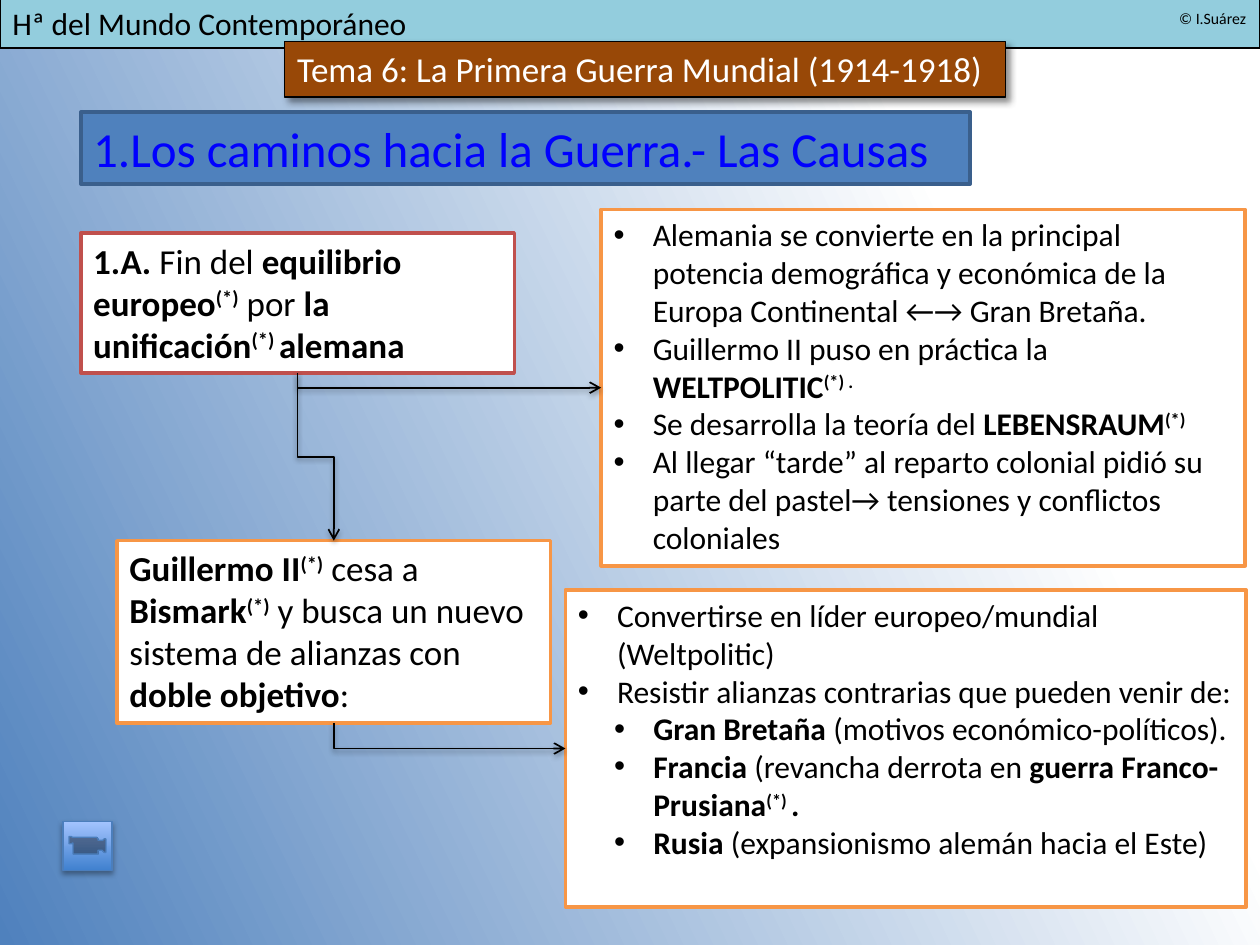
import pptx
import pptx.util
import pptx.dml.color
import pptx.enum.shapes
import pptx.enum.text
import pptx.oxml
import pptx.oxml.ns

Cm, Pt = pptx.util.Cm, pptx.util.Pt
KIND = pptx.enum.shapes.MSO_SHAPE
ELBOW = pptx.enum.shapes.MSO_CONNECTOR.ELBOW
TOP = pptx.enum.text.MSO_ANCHOR.TOP
LEFT = pptx.enum.text.PP_ALIGN.LEFT
BOLD, SUP = "bold", "sup"
STAR = ("(*)", SUP)

THEME = {
    "font": "Calibri",
    # style: fill, line, line width, text size, text colour
    "head": ("93CDDD", "000000", 0.75, 18, "000000"),
    "topic": ("984807", "000000", 0.75, 20, "FFFFFF"),
    "credit": (None, None, 0, 9, "000000"),
    "title": ("4F81BD", "3A5F8C", 2, 28, "0000FF"),
    "cause": ("FFFFFF", "C0504D", 2, 20, "000000"),
    "step": ("FFFFFF", "F79646", 2, 20, "000000"),
    "list": ("FFFFFF", "F79646", 2, 18, "000000"),
    "back": ((0, "4F81BD"), (0.76, "FFFFFF")),
    "film": ((0, "3F80CE"), (1, "A4C4FF")),
    "edge": "4B7EBC",
    "arrow": "000000",
    # shadow: opacity %, blur pt, distance pt, angle
    "topic shade": (43, 4, 3, 45),
    "arrow shade": (38, 3.1, 1.6, 90),
    "film shade": (35, 3.1, 1.8, 90),
}

# name: style, (left, top, width, height) in cm, paragraphs of (level, runs)
BOXES = {
    "head": ("head", (0, -0.05, 25.4, 1.02), [(0, ["Hª del Mundo Contemporáneo"])]),
    "topic": ("topic", (5.74, 0.84, 14.53, 1.12),
              [(0, ["Tema 6: La Primera Guerra Mundial (1914-1918)"])]),
    "credit": ("credit", (23.52, 0.05, 1.88, 0.64), [(0, ["© I.Suárez"])]),
    "title": ("title", (1.63, 2.26, 17.93, 1.45),
              [(0, ["1.Los caminos hacia la Guerra.- Las Causas"])]),
    "cause": ("cause", (1.63, 4.7, 8.74, 2.82), [
        (0, [("1.A. ", BOLD), "Fin del ", ("equilibrio europeo", BOLD), STAR, " por ",
             ("la unificación", BOLD), ("(*) ", SUP), ("alemana", BOLD)])]),
    "rise": ("list", (12.12, 4.22, 12.98, 7.19), [
        (1, ["Alemania se convierte en la principal potencia demográfica y económica "
             "de la Europa Continental ←→ Gran Bretaña."]),
        (1, ["Guillermo II puso en práctica la", (" WELTPOLITIC", BOLD), ("(*) .", SUP)]),
        (1, ["Se desarrolla la teoría del ", ("LEBENSRAUM", BOLD), STAR]),
        (1, ["Al llegar “tarde” al reparto colonial pidió su parte del pastel→ "
             "tensiones y conflictos coloniales"])]),
    "kaiser": ("step", (2.36, 10.9, 8.74, 3.68), [
        (0, [("Guillermo II", BOLD), STAR, " cesa a ", ("Bismark", BOLD), STAR,
             " y busca un nuevo sistema de alianzas con ", ("doble objetivo", BOLD), ":"])]),
    "goals": ("list", (11.4, 11.89, 13.72, 6.4), [
        (1, ["Convertirse en líder europeo/mundial (Weltpolitic)"]),
        (1, ["Resistir alianzas contrarias que pueden venir de:"]),
        (2, [("Gran Bretaña ", BOLD), "(motivos económico-políticos)."]),
        (2, [("Francia", BOLD), " (revancha derrota en ", ("guerra Franco-Prusiana", BOLD),
             ("(*) ", SUP), (".", BOLD)]),
        (2, [("Rusia", BOLD), " (expansionismo alemán hacia el Este)"])]),
}
ARROWS = [("cause", "rise", "left"), ("cause", "kaiser", "top"), ("kaiser", "goals", "left")]
FILM = (1.27, 16.56, 0.99, 0.99)
INDENT = {1: 0.79, 2: 1.52}
HANG = 0.79


def rgb(code):
    return pptx.dml.color.RGBColor.from_string(code)


def put(item, values):
    for name, value in values.items():
        setattr(item, name, value)


def add_xml(parent, text):
    space = pptx.oxml.ns.nsdecls("a")
    node = pptx.oxml.parse_xml(text.replace(" ", f" {space} ", 1))
    parent.append(node)


def shade(shape, look):
    """Give the shape an outer shadow from (opacity, blur, distance, angle)."""
    alpha, blur, dist, angle = look
    add_xml(shape._element.spPr,
            f'<a:effectLst ><a:outerShdw blurRad="{Pt(blur)}" dist="{Pt(dist)}" '
            f'dir="{angle * 60000}" rotWithShape="0"><a:srgbClr val="000000">'
            f'<a:alpha val="{alpha * 1000}"/></a:srgbClr></a:outerShdw></a:effectLst>')


def blend(fill, stops, angle):
    fill.gradient()
    fill.gradient_angle = angle
    for stop, (place, code) in zip(fill.gradient_stops, stops):
        stop.position = place
        stop.color.rgb = rgb(code)


def stroke(line, code, width):
    line.fill.solid()
    put(line, {"width": Pt(width)})
    line.color.rgb = rgb(code)


def write(frame, paras, size, code):
    for spot, (level, runs) in enumerate(paras):
        para = frame.add_paragraph() if spot else frame.paragraphs[0]
        para.alignment = LEFT
        if level:
            props = para._p.get_or_add_pPr()
            props.set("marL", str(Cm(INDENT[level])))
            props.set("indent", str(-Cm(HANG)))
            add_xml(props, '<a:buFont typeface="Arial"/>')
            add_xml(props, '<a:buChar char="•"/>')
        for part in runs:
            text, mark = (part, None) if isinstance(part, str) else part
            run = para.add_run()
            run.text = text
            put(run.font, {"name": THEME["font"], "size": Pt(size), "bold": mark is not None})
            run.font.color.rgb = rgb(code)
            if mark == SUP:
                run._r.get_or_add_rPr().set("baseline", "30000")


def add_box(slide, style, place, paras):
    fill, line, width, size, code = THEME[style]
    spot = [Cm(n) for n in place]
    if fill:
        box = slide.shapes.add_shape(KIND.RECTANGLE, *spot)
        box.shadow.inherit = False
        box.fill.solid()
        box.fill.fore_color.rgb = rgb(fill)
        stroke(box.line, line, width)
    else:
        box = slide.shapes.add_textbox(*spot)
    put(box.text_frame, {"word_wrap": bool(fill), "vertical_anchor": TOP})
    write(box.text_frame, paras, size, code)
    return box


def add_arrow(slide, start, end, side):
    """Bend an arrow from the bottom of start to the left or top of end."""
    x, y = start.left + start.width // 2, start.top + start.height
    if side == "left":
        far, low = end.left, end.top + end.height // 2
    else:
        far, low = end.left + end.width // 2, end.top
    wide, high = far - x, low - y
    # A quarter turn swaps the sides of the frame around its centre
    left, top = (x + far - high) // 2, (y + low - wide) // 2
    link = slide.shapes.add_connector(ELBOW, left, top, left + high, top + wide)
    frame = link._element.spPr.xfrm
    frame.set("rot", str(270 * 60000))
    frame.set("flipH", "1")
    if side == "left":
        link._element.spPr.prstGeom.set("prst", "bentConnector2")
    stroke(link.line, THEME["arrow"], 1)
    add_xml(link.line._get_or_add_ln(), '<a:tailEnd type="arrow"/>')
    shade(link, THEME["arrow shade"])


def main():
    deck = pptx.Presentation()
    put(deck, {"slide_width": Cm(25.4), "slide_height": Cm(19.05)})
    slide = deck.slides.add_slide(deck.slide_layouts[6])
    blend(slide.background.fill, THEME["back"], 26)
    boxes = {name: add_box(slide, *data) for name, data in BOXES.items()}
    topic = boxes["topic"]
    topic._element.spPr.remove(topic._element.spPr.find(pptx.oxml.ns.qn("a:effectLst")))
    shade(topic, THEME["topic shade"])
    for start, end, side in ARROWS:
        add_arrow(slide, boxes[start], boxes[end], side)
    film = slide.shapes.add_shape(KIND.ACTION_BUTTON_MOVIE, *[Cm(n) for n in FILM])
    blend(film.fill, THEME["film"], 90)
    stroke(film.line, THEME["edge"], 0.75)
    shade(film, THEME["film shade"])
    deck.save("out.pptx")


if __name__ == "__main__":
    main()
